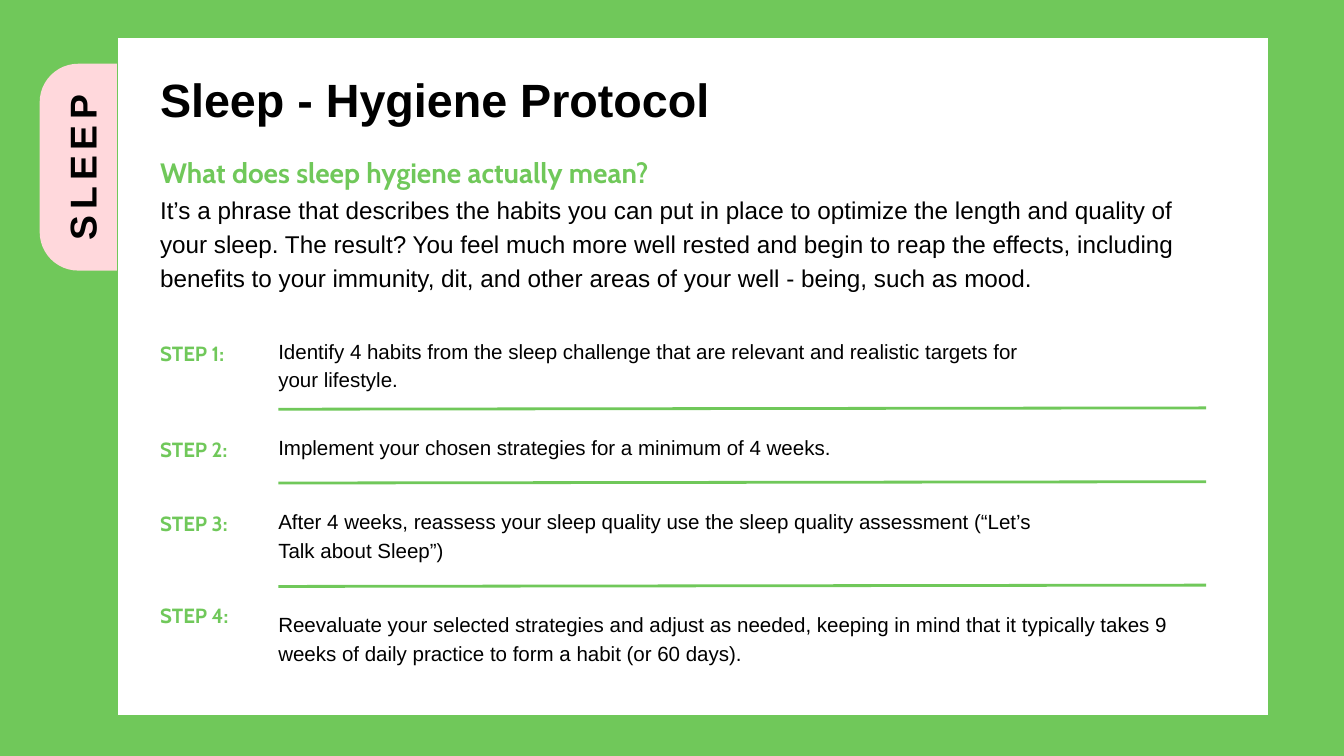
"""Build the sleep hygiene protocol slide."""
from lxml import etree
from pptx import Presentation
from pptx.dml.color import RGBColor
from pptx.enum import shapes, text
from pptx.oxml import ns
from pptx.util import Cm, Pt

GREEN, PINK, WHITE, BLACK = "70C85A", "FFD8DC", "FFFFFF", "000000"
LEFT, COL, END = 6.05, 10.52, 45.59


def paint(fmt, tint):
    fmt.solid()
    fmt.fore_color.rgb = RGBColor.from_string(tint)


def write(words, x, y, w, h, size, face="Arial", tint=BLACK, bold=False):
    box = slide.shapes.add_textbox(Cm(x), Cm(y), Cm(w), Cm(h))
    frame = box.text_frame
    frame.word_wrap = True
    frame.margin_left = frame.margin_right = 0
    frame.margin_top = frame.margin_bottom = 0
    para = frame.paragraphs[0]
    para.line_spacing = Pt(size * 1.4)
    run = para.add_run()
    run.text = words
    run.font.name = face
    run.font.size = Pt(size)
    run.font.bold = bold
    run.font.color.rgb = RGBColor.from_string(tint)
    return box


deck = Presentation()
deck.slide_width, deck.slide_height = Cm(50.8), Cm(28.58)
slide = deck.slides.add_slide(deck.slide_layouts[6])
paint(slide.background.fill, GREEN)

kind = shapes.MSO_SHAPE
tab = slide.shapes.add_shape(
    kind.ROUNDED_RECTANGLE, Cm(1.5), Cm(2.41), Cm(4.55), Cm(7.82))
tab.adjustments[0] = 0.32
tab.shadow.inherit = False
paint(tab.fill, PINK)
tab.line.fill.background()

card = slide.shapes.add_shape(
    kind.RECTANGLE, Cm(4.45), Cm(1.4), Cm(43.51), Cm(25.65))
card.shadow.inherit = False
paint(card.fill, WHITE)
paint(card.line.fill, GREEN)
card.line.width = Pt(1.5)

write("It’s a phrase that describes the habits you can put in place to "
      "optimize the length and quality of your sleep. The result? You feel "
      "much more well rested and begin to reap the effects, including "
      "benefits to your immunity, dit, and other areas of your "
      "well - being, such as mood.", LEFT, 7.21, 40.28, 3.91, 26)
write("Sleep - Hygiene Protocol", LEFT, 2.31, 31.47, 2.67, 50, bold=True)
side = write("SLEEP", 0.1, 5.11, 5.82, 2.11, 40, bold=True)
side.rotation = 270
side.text_frame.paragraphs[0].runs[0]._r.get_or_add_rPr().set("spc", "620")
write("What does sleep hygiene actually mean?",
      LEFT, 5.66, 31.27, 1.42, 30, "Cabin", GREEN, True)

steps = [
    (12.75, 12.65, 28.47, 2.18,
     "Identify 4 habits from the sleep challenge that are relevant and "
     "realistic targets for your lifestyle."),
    (16.38, 16.28, 28.47, 1.12,
     "Implement your chosen strategies for a minimum of 4 weeks."),
    (19.15, 19.1, 28.47, 2.18,
     "After 4 weeks, reassess your sleep quality use the sleep quality "
     "assessment (“Let’s Talk about Sleep”)"),
    (22.63, 22.99, 35.07, 2.18,
     "Reevaluate your selected strategies and adjust as needed, keeping in "
     "mind that it typically takes 9 weeks of daily practice to form a "
     "habit (or 60 days)."),
]
for num, (top, y, w, h, words) in enumerate(steps, 1):
    label = write(f"STEP {num}:", LEFT, top, 4.09, 1.02, 22,
                  "Cabin", GREEN, True)
    label.text_frame.paragraphs[0].alignment = text.PP_ALIGN.JUSTIFY
    write(words, COL, y, w, h, 22)

for y in (15.47, 18.26, 22.17):
    rule = slide.shapes.add_connector(
        shapes.MSO_CONNECTOR.STRAIGHT, Cm(COL), Cm(y), Cm(END), Cm(y - 0.05))
    paint(rule.line.fill, GREEN)
    rule.line.width = Pt(3)
    etree.SubElement(rule._element.spPr, ns.qn("a:effectLst"))

deck.save("out.pptx")
